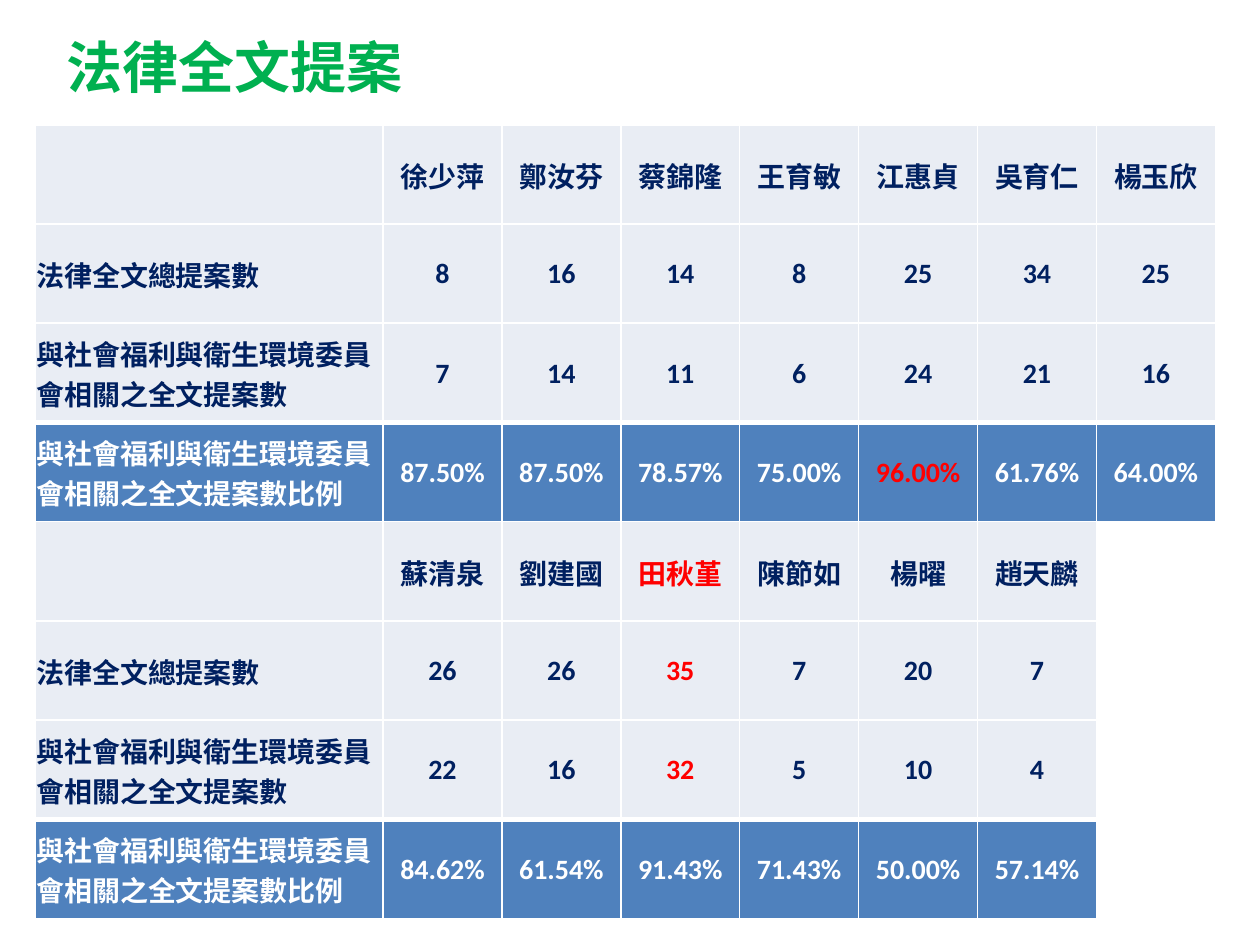
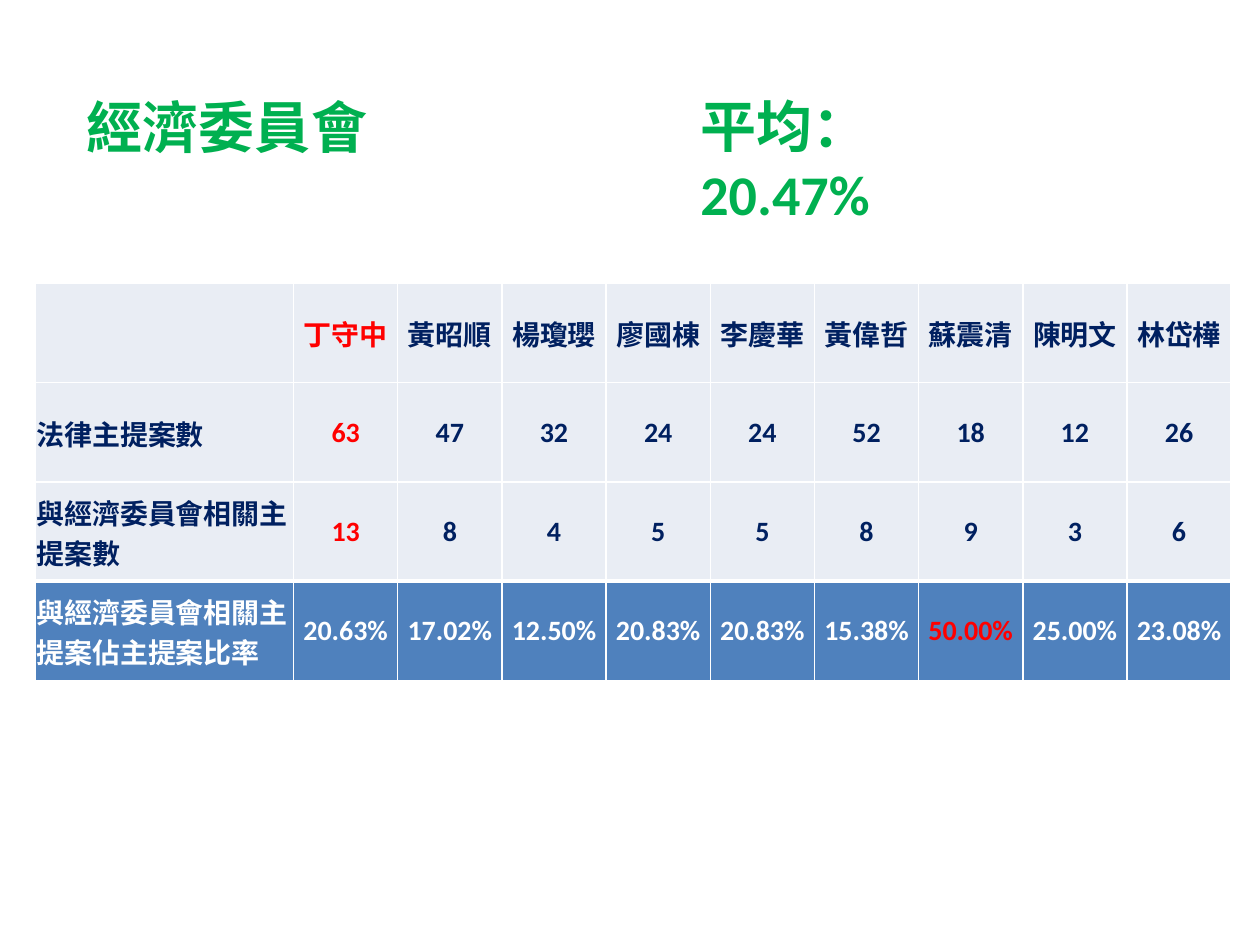
from dataclasses import dataclass

from lxml import etree
from pptx import Presentation
from pptx.dml.color import RGBColor
from pptx.enum import text
from pptx.oxml import ns
from pptx.util import Inches, Pt


# Shared look
@dataclass(frozen=True)
class Theme:
    green: str = "00B050"
    navy: str = "002060"
    red: str = "FF0000"
    white: str = "FFFFFF"
    pale: str = "E9EDF4"
    blue: str = "4F81BD"
    title_font: str = "Noto Sans CJK SC"
    body_font: str = "Calibri"
    title_size: int = 32
    body_size: int = 16
    thin: int = 1
    thick: int = 3


THEME = Theme()
SLIDE_W, SLIDE_H = Inches(10), Inches(7.5)
TABLE_LEFT = 2.8  # percent of slide width
ROW_H = 10.5      # percent of slide height


@dataclass(frozen=True)
class Box:
    """A place on the slide, in percent of its width and height."""
    left: float
    top: float
    width: float
    height: float


@dataclass(frozen=True)
class ProposalTable:
    top: float
    label_w: float
    name_w: float
    rows: list[list[str]]
    red: frozenset[tuple[int, int]]  # highlighted (row, column) cells


def across(percent: float) -> int:
    return round(SLIDE_W * percent / 100)


def down(percent: float) -> int:
    return round(SLIDE_H * percent / 100)


def style(p, font: str, size: int, color: str) -> None:
    p.font.name, p.font.size, p.font.bold = font, Pt(size), True
    p.font.color.rgb = RGBColor.from_string(color)


# Headings
def put_heading(sp, box: Box, words: str, font: str) -> None:
    sp.left, sp.top = across(box.left), down(box.top)
    sp.width, sp.height = across(box.width), down(box.height)
    tf = sp.text_frame
    tf.text = words
    tf.word_wrap = True
    tf.auto_size = text.MSO_AUTO_SIZE.NONE
    tf.vertical_anchor = text.MSO_ANCHOR.TOP
    p = tf.paragraphs[0]
    p.alignment = text.PP_ALIGN.LEFT
    style(p, font, THEME.title_size, THEME.green)


def add_titled_slide(prs, title: str, box: Box):
    s = prs.slides.add_slide(prs.slide_layouts[5])
    put_heading(s.shapes.title, box, title, THEME.title_font)
    return s


# Tables
def set_borders(cell, top: int, bottom: int) -> None:
    tc_pr = cell._tc.get_or_add_tcPr()
    widths = {"lnL": THEME.thin, "lnR": THEME.thin, "lnT": top, "lnB": bottom}
    for i, (side, width) in enumerate(widths.items()):
        ln = etree.Element(ns.qn(f"a:{side}"), w=str(Pt(width)))
        fill = etree.SubElement(ln, ns.qn("a:solidFill"))
        etree.SubElement(fill, ns.qn("a:srgbClr"), val=THEME.white)
        tc_pr.insert(i, ln)


def fill_cell(cell, words: str, is_label: bool, is_ratio: bool, is_red: bool) -> None:
    cell.fill.solid()
    cell.fill.fore_color.rgb = RGBColor.from_string(THEME.blue if is_ratio else THEME.pale)
    cell.vertical_anchor = text.MSO_ANCHOR.MIDDLE
    cell.margin_left = cell.margin_right = cell.margin_top = Inches(0.01)
    cell.margin_bottom = 0
    if not words:
        return
    cell.text = words
    p = cell.text_frame.paragraphs[0]
    p.alignment = text.PP_ALIGN.LEFT if is_label else text.PP_ALIGN.CENTER
    color = THEME.red if is_red else THEME.white if is_ratio else THEME.navy
    style(p, THEME.body_font, THEME.body_size, color)


def add_proposals(s, spec: ProposalTable) -> None:
    n_rows, n_cols = len(spec.rows), len(spec.rows[0])
    widths = [spec.label_w] + [spec.name_w] * (n_cols - 1)
    table = s.shapes.add_table(n_rows, n_cols, across(TABLE_LEFT), down(spec.top),
                               across(sum(widths)), down(ROW_H * n_rows)).table
    table.first_row = table.horz_banding = False
    for column, width in zip(table.columns, widths):
        column.width = across(width)
    last = n_rows - 1
    for r, row in enumerate(spec.rows):
        table.rows[r].height = down(ROW_H)
        for c, words in enumerate(row):
            cell = table.cell(r, c)
            fill_cell(cell, words, c == 0, r == last, (r, c) in spec.red)
            set_borders(cell, THEME.thick if r == last else THEME.thin,
                        THEME.thick if r == last - 1 else THEME.thin)


# Content
WELFARE_LABELS = ["", "法律全文總提案數", "與社會福利與衛生環境委員會相關之全文提案數",
                  "與社會福利與衛生環境委員會相關之全文提案數比例"]
ECONOMY_LABELS = ["", "法律主提案數", "與經濟委員會相關主提案數",
                  "與經濟委員會相關主提案佔主提案比率"]


def labelled(labels: list[str], rows: list[str]) -> list[list[str]]:
    return [[label, *row.split()] for label, row in zip(labels, rows)]


WELFARE_FIRST = ProposalTable(13.2, 27.6, 9.44, labelled(WELFARE_LABELS, [
    "徐少萍 鄭汝芬 蔡錦隆 王育敏 江惠貞 吳育仁 楊玉欣",
    "8 16 14 8 25 34 25",
    "7 14 11 6 24 21 16",
    "87.50% 87.50% 78.57% 75.00% 96.00% 61.76% 64.00%",
]), frozenset({(3, 5)}))

WELFARE_SECOND = ProposalTable(55.2, 27.6, 9.44, labelled(WELFARE_LABELS, [
    "蘇清泉 劉建國 田秋堇 陳節如 楊曜 趙天麟",
    "26 26 35 7 20 7",
    "22 16 32 5 10 4",
    "84.62% 61.54% 91.43% 71.43% 50.00% 57.14%",
]), frozenset({(0, 3), (1, 3), (2, 3)}))

ECONOMY = ProposalTable(30, 20.5, 8.27, labelled(ECONOMY_LABELS, [
    "丁守中 黃昭順 楊瓊瓔 廖國棟 李慶華 黃偉哲 蘇震清 陳明文 林岱樺",
    "63 47 32 24 24 52 18 12 26",
    "13 8 4 5 5 8 9 3 6",
    "20.63% 17.02% 12.50% 20.83% 20.83% 15.38% 50.00% 25.00% 23.08%",
]), frozenset({(0, 1), (1, 1), (2, 1), (3, 7)}))


def main() -> None:
    prs = Presentation()
    prs.slide_width, prs.slide_height = SLIDE_W, SLIDE_H

    # Full-text proposals
    s = add_titled_slide(prs, "法律全文提案", Box(4.3, 2.8, 28.9, 8.53))
    for proposals in (WELFARE_FIRST, WELFARE_SECOND):
        add_proposals(s, proposals)

    # Economics committee, with its average on two lines
    s = add_titled_slide(prs, "經濟委員會", Box(5.9, 9.07, 33.1, 8.53))
    add_proposals(s, ECONOMY)
    average = s.shapes.add_textbox(0, 0, 0, 0)
    put_heading(average, Box(54.6, 9.07, 29.1, 12.53), "平均：20.47%", THEME.body_font)
    average.text_frame.margin_right = Inches(0.6)

    prs.save("out.pptx")


if __name__ == "__main__":
    main()
